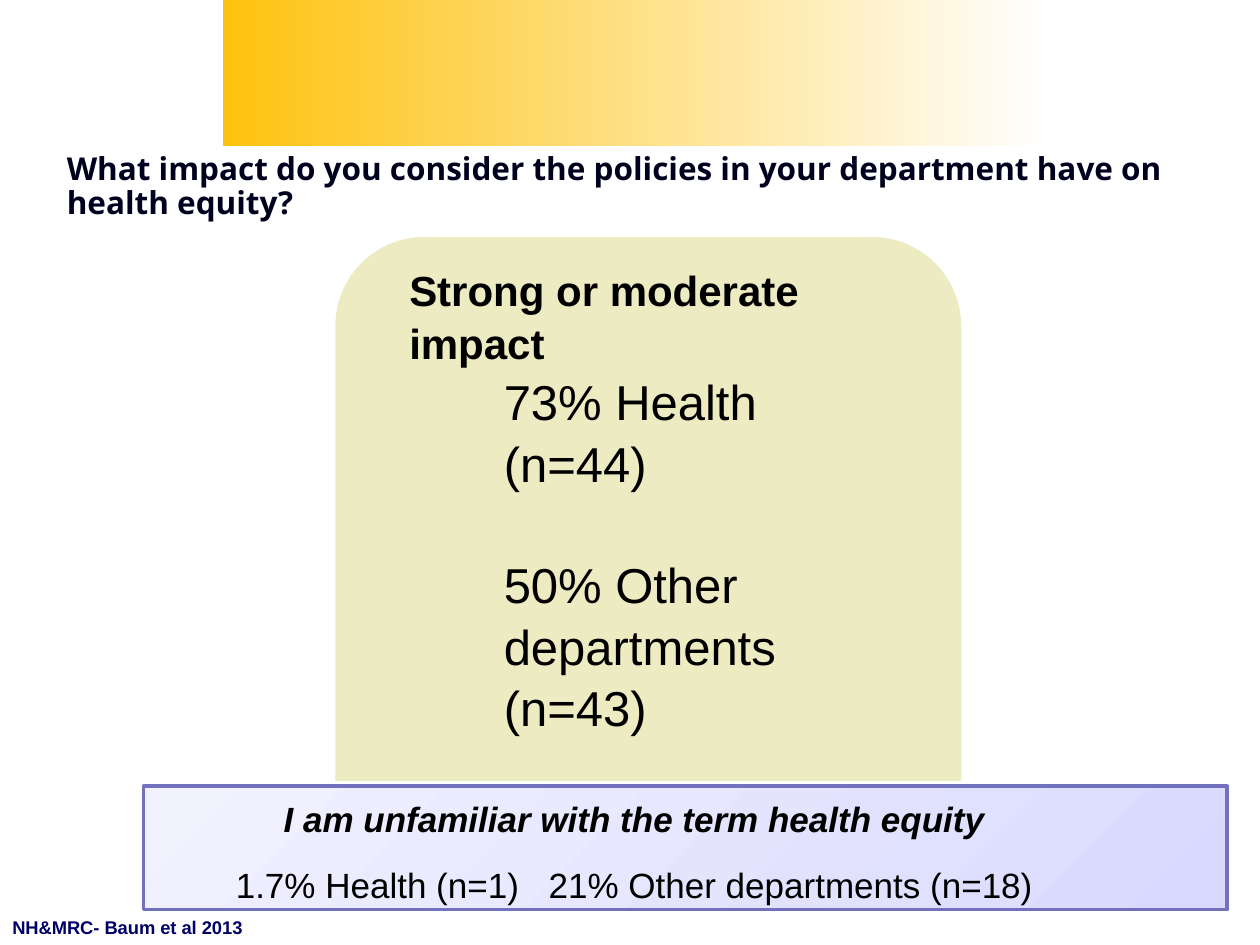
from pptx import Presentation
from pptx.dml.color import RGBColor
from pptx.enum.shapes import MSO_SHAPE as Shape
from pptx.enum.text import MSO_ANCHOR as Anchor, PP_ALIGN as Align
from pptx.util import Inches, Pt

WHITE = RGBColor(0xFF, 0xFF, 0xFF)
BLACK = RGBColor(0, 0, 0)
GOLD = RGBColor(0xFE, 0xC2, 0x0F)
NAVY = RGBColor(0x00, 0x00, 0x1F)
BLUE = RGBColor(0x00, 0x00, 0x66)
CREAM = RGBColor(0xED, 0xEB, 0xC1)
LILAC = RGBColor(0xD9, 0xD9, 0xFF)
PALE_LILAC = RGBColor(0xF2, 0xF2, 0xFF)
VIOLET = RGBColor(0x71, 0x71, 0xBD)

TITLE = "What impact do you consider the policies in your department have on health equity?"
PANEL_HEADING = "Strong or moderate impact"
# Text and space before, in points
RESULTS = [("73% Health", 0), ("(n=44)", 0),
           ("50% Other", 33.7), ("departments", 0), ("(n=43)", 0)]
UNFAMILIAR = "I am unfamiliar with the term health equity"
UNFAMILIAR_RESULTS = ("1.7% Health (n=1)", "21% Other departments (n=18)")
SOURCE = "NH&MRC- Baum et al 2013"

# Preset, place, adjustments, outline
PANEL = [
    (Shape.ROUND_2_SAME_RECTANGLE, (2.64, 1.86, 5.01, 4.36), (), WHITE),
    (Shape.RECTANGLE, (2.67, 2.73, 3.41, 0.77), (), None),
    (Shape.ROUND_2_SAME_RECTANGLE, (2.89, 1.98, 4.51, 0.67), (0.46, 0), None),
]


def add_block(shapes, preset, place, line=None, width=0):
    block = shapes.add_shape(preset, *map(Inches, place))
    block.shadow.inherit = False
    if line is None:
        block.line.fill.background()
    else:
        block.line.color.rgb = line
        block.line.width = Pt(width)
    return block


def fill_gradient(block, colors, angle):
    block.fill.gradient()
    block.fill.gradient_angle = angle
    for stop, color in zip(block.fill.gradient_stops, colors):
        stop.color.rgb = color


def style(para, size, color=BLACK, bold=False, italic=False, name="Arial"):
    font = para.font
    font.name, font.size, font.bold, font.italic = name, Pt(size), bold, italic
    font.color.rgb = color


def add_text(shapes, place, lines, wrap=True):
    """Add a text box and return its paragraphs, one per line."""
    frame = shapes.add_textbox(*map(Inches, place)).text_frame
    frame.word_wrap = wrap
    frame.text = "\n".join(lines)
    return frame.paragraphs


deck = Presentation()
deck.slide_width, deck.slide_height = Inches(10), Inches(7.5)
page = deck.slides.add_slide(deck.slide_layouts[5])
shapes = page.shapes

# Title over the gold band
title = shapes.title
title.left, title.top, title.width, title.height = map(Inches, (0.43, 0.68, 9, 1.25))
title.text = TITLE
title.text_frame.vertical_anchor = Anchor.BOTTOM
title.text_frame.margin_bottom = Inches(0.17)
para = title.text_frame.paragraphs[0]
para.alignment = Align.LEFT
para.line_spacing = 0.9
style(para, 18, NAVY, bold=True, name="Open Sans")

band = add_block(shapes, Shape.RECTANGLE, (1.77, 0, 6.56, 1.16))
fill_gradient(band, (GOLD, WHITE), 0)
title.element.addprevious(band.element)

# Cream panel
panel = shapes.add_group_shape()
for preset, place, adjustments, line in PANEL:
    block = add_block(panel.shapes, preset, place, line, 3)
    block.fill.solid()
    block.fill.fore_color.rgb = CREAM
    for index, value in enumerate(adjustments):
        block.adjustments[index] = value

heading, = add_text(panel.shapes, (3.15, 2.03, 4.16, 0.5), [PANEL_HEADING])
heading.line_spacing = 1.05
style(heading, 24, bold=True)

paras = add_text(shapes, (3.9, 2.88, 2.36, 2.93), [text for text, _ in RESULTS])
for para, (_, gap) in zip(paras, RESULTS):
    para.line_spacing = 1.05
    para.space_before = Pt(gap)
    style(para, 28)

# Lilac strip
strip = add_block(shapes, Shape.RECTANGLE, (1.14, 6.24, 8.6, 0.98), VIOLET, 2)
fill_gradient(strip, (LILAC, PALE_LILAC), 135)

statement, results = add_text(shapes, (0.86, 6.26, 8.35, 0.95), [UNFAMILIAR, ""])
health, others = UNFAMILIAR_RESULTS
for text in (health, " ", others):
    span = results.add_run()
    span.text = text
    if text == " ":
        span._r.get_or_add_rPr().set("spc", "1110")  # widens the gap
results.space_before = Pt(12.5)
for para, strong in ((statement, True), (results, False)):
    para.alignment = Align.CENTER
    para.line_spacing = 1.05
    style(para, 20, bold=strong, italic=strong)

source, = add_text(shapes, (0, 7.22, 2.06, 0.28), [SOURCE], wrap=False)
style(source, 10.5, BLUE, bold=True)

deck.save("out.pptx")
